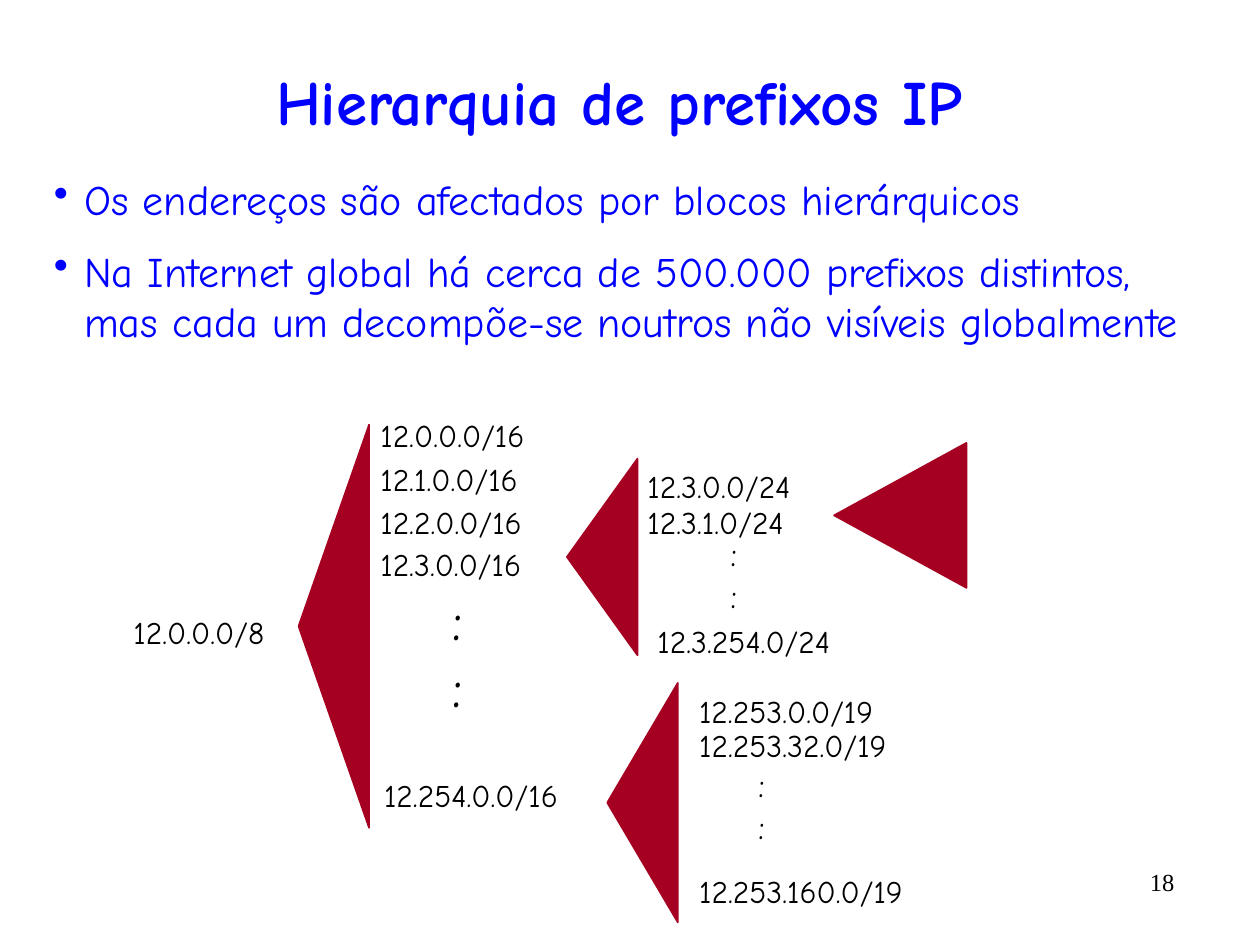
import pptx
import pptx.util
import pptx.dml.color
import pptx.enum.shapes
import pptx.enum.text
import pptx.oxml.ns
from lxml import etree

Inches, Pt = pptx.util.Inches, pptx.util.Pt
RGB = pptx.dml.color.RGBColor.from_string
ALIGN = pptx.enum.text.PP_ALIGN
ANCHOR = pptx.enum.text.MSO_ANCHOR

THEME = {
    "title": {"name": "Comic Neue", "size": 36, "bold": True, "color": "0000FF"},
    "body": {"name": "Comic Neue", "size": 24, "color": "0000FF"},
    "prefix": {"name": "Comic Neue", "size": 18, "color": "000000"},
    "dots": {"name": "Comic Neue", "size": 20, "color": "000000"},
    "big dots": {"name": "Comic Neue", "size": 32, "color": "000000"},
    "number": {"name": "Times New Roman", "size": 14, "color": "000000"},
    "fan": "A50021",
}

TITLE = "Hierarquia de prefixos IP"
BULLETS = [
    "Os endereços são afectados por blocos hierárquicos",
    "Na Internet global há cerca de 500.000 prefixos distintos, "
    "mas cada um decompõe-se noutros não visíveis globalmente",
]
SLIDE_NUMBER = "18"

# Prefix, left, top, width
PREFIXES = [
    ("12.0.0.0/8", 0.96, 4.82, 1.41),
    ("12.0.0.0/16", 2.92, 3.25, 1.52),
    ("12.1.0.0/16", 2.92, 3.6, 1.48),
    ("12.2.0.0/16", 2.92, 3.94, 1.52),
    ("12.3.0.0/16", 2.92, 4.28, 1.52),
    ("12.254.0.0/16", 2.95, 6.11, 1.83),
    ("12.3.0.0/24", 5.04, 3.66, 1.56),
    ("12.3.1.0/24", 5.04, 3.94, 1.52),
    ("12.3.254.0/24", 5.12, 4.89, 1.87),
    ("12.253.0.0/19", 5.45, 5.44, 1.83),
    ("12.253.32.0/19", 5.45, 5.71, 1.98),
    ("12.253.160.0/19", 5.45, 6.87, 2.09),
]
PREFIX_HEIGHT = 0.4

# Style, left, top, width, height
ELLIPSES = [
    ("big dots", 3.49, 4.59, 0.34, 1.18),
    ("dots", 5.7, 4.17, 0.29, 0.77),
    ("dots", 5.92, 6, 0.29, 0.77),
]

# Tip x, tip y, depth, spread
FANS = [
    (2.37, 4.97, 0.56, 3.2),
    (4.5, 4.42, 0.56, 1.56),
    (4.82, 6.37, 0.56, 1.9),
    (6.62, 4.09, 1.05, 1.15),
]


def write(tf, lines, style, align=ALIGN.LEFT):
    fmt = dict(THEME[style])
    color = RGB(fmt.pop("color"))
    fmt["size"] = Pt(fmt["size"])
    for i, line in enumerate(lines):
        p = tf.add_paragraph() if i else tf.paragraphs[0]
        p.alignment = align
        r = p.add_run()
        r.text = line
        for name, value in fmt.items():
            setattr(r.font, name, value)
        r.font.color.rgb = color


def add_text(s, box, lines, style, align=ALIGN.LEFT, wrap=False):
    tf = s.shapes.add_textbox(*map(Inches, box)).text_frame
    tf.word_wrap = wrap
    if not wrap:
        tf.auto_size = pptx.enum.text.MSO_AUTO_SIZE.SHAPE_TO_FIT_TEXT
    write(tf, lines, style, align)
    return tf


def add_bullet(p, indent):
    pPr = p._p.get_or_add_pPr()
    pPr.set("marL", str(Inches(indent)))
    pPr.set("indent", str(-Inches(indent)))
    etree.SubElement(pPr, pptx.oxml.ns.qn("a:buChar")).set("char", "•")


def add_fan(s, tip_x, tip_y, depth, spread):
    """Add a triangle turned so that it opens to the right of its tip."""
    left = tip_x + depth / 2 - spread / 2
    top = tip_y - depth / 2
    sp = s.shapes.add_shape(
        pptx.enum.shapes.MSO_SHAPE.ISOSCELES_TRIANGLE,
        *map(Inches, (left, top, spread, depth)))
    sp.rotation = 270
    sp.shadow.inherit = False
    sp.fill.solid()
    sp.fill.fore_color.rgb = sp.line.color.rgb = RGB(THEME["fan"])
    sp.line.width = Pt(1)


def main():
    prs = pptx.Presentation()
    prs.slide_width, prs.slide_height = Inches(10), Inches(7.5)
    s = prs.slides.add_slide(prs.slide_layouts[5])

    title = s.shapes.title
    title.left, title.top, title.width, title.height = map(
        Inches, (0.33, 0.42, 9.17, 0.75))
    title.text_frame.vertical_anchor = ANCHOR.MIDDLE
    write(title.text_frame, [TITLE], "title", ALIGN.CENTER)

    body = add_text(s, (0.33, 1.33, 9.42, 1.87), BULLETS, "body", wrap=True)
    for p in body.paragraphs:
        p.space_before = Pt(12)
        add_bullet(p, 0.24)

    for fan in FANS:
        add_fan(s, *fan)
    for prefix, *box in PREFIXES:
        add_text(s, (*box, PREFIX_HEIGHT), [prefix], "prefix")
    for style, *box in ELLIPSES:
        add_text(s, box, [":", ":"], style)
    add_text(s, (8.42, 6.83, 1, 0.42), [SLIDE_NUMBER], "number",
             ALIGN.RIGHT, wrap=True)

    prs.save("out.pptx")


if __name__ == "__main__":
    main()
